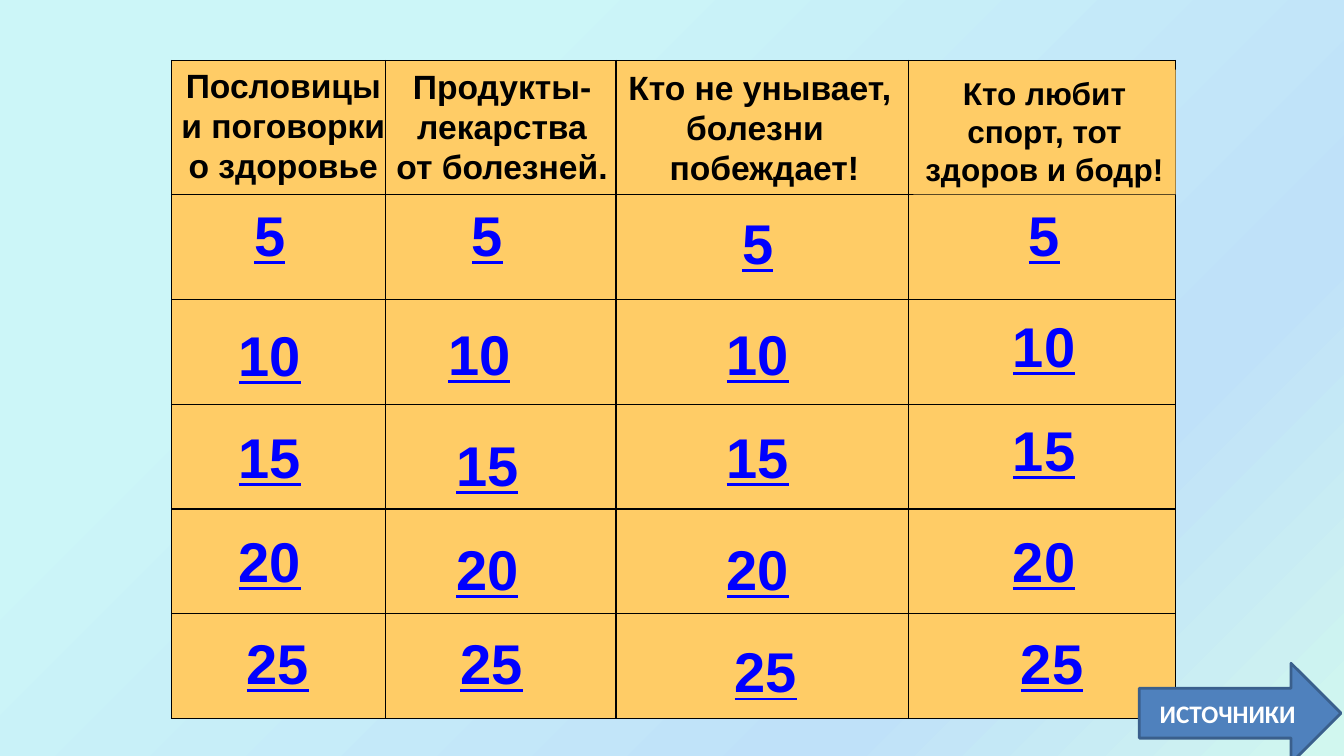
from copy import deepcopy
from dataclasses import dataclass

from lxml import etree
from pptx import Presentation
from pptx.dml.color import RGBColor
from pptx.enum.shapes import MSO_SHAPE
from pptx.enum.text import MSO_ANCHOR, MSO_AUTO_SIZE, PP_ALIGN
from pptx.oxml.ns import qn
from pptx.shapes.autoshape import Shape
from pptx.slide import Slide
from pptx.table import _Cell
from pptx.util import Emu, Pt

RECTANGLE = MSO_SHAPE.RECTANGLE
RIGHT_ARROW = MSO_SHAPE.RIGHT_ARROW
MIDDLE = MSO_ANCHOR.MIDDLE
CENTER = PP_ALIGN.CENTER
GROW = MSO_AUTO_SIZE.SHAPE_TO_FIT_TEXT

BLACK = RGBColor(0x00, 0x00, 0x00)
WHITE = RGBColor(0xFF, 0xFF, 0xFF)
GOLD = RGBColor(0xFF, 0xCC, 0x66)
SCORE_BLUE = RGBColor(0x00, 0x00, 0xFF)
ARROW_BLUE = RGBColor(0x4F, 0x81, 0xBD)
ARROW_EDGE = RGBColor(0x3A, 0x5F, 0x8C)
PALE_CYAN = RGBColor(0xCC, 0xF6, 0xF8)
PALE_BLUE = RGBColor(0xBF, 0xE1, 0xF9)
PALE_GREEN = RGBColor(0xD1, 0xF7, 0xEF)

EMU_PER_PX = 9144
SLIDE_WIDTH, SLIDE_HEIGHT = 1333, 750
COLUMN_WIDTHS = (212, 229, 290, 265)
ROW_HEIGHTS = (133, 104, 104, 104, 104, 104)
SCORES = ("5", "10", "15", "20", "25")
SCORE_HEIGHT = 77
BACKDROP_STOPS = ((0.25, PALE_CYAN), (0.75, PALE_BLUE), (1.0, PALE_GREEN))


@dataclass(frozen=True)
class Box:
    left: int
    top: int
    width: int
    height: int


@dataclass(frozen=True)
class Category:
    title: str
    box: Box
    size: float
    filled: bool
    score_centers: tuple[int, ...]
    score_tops: tuple[int, ...]


CATEGORIES = (
    Category("Пословицы и поговорки о здоровье", Box(161, 59, 240, 131), 24, False,
             (267, 267, 267, 267, 275), (194, 313, 414, 517, 619)),
    Category("Продукты-лекарства от болезней.", Box(383, 60, 230, 131), 24, False,
             (483, 475, 483, 483, 487), (194, 312, 422, 525, 619)),
    Category("Кто не унывает, болезни \n побеждает!", Box(613, 61, 281, 131), 24, True,
             (751, 751, 751, 751, 759), (202, 312, 414, 525, 627)),
    Category("Кто любит спорт, тот здоров и бодр!", Box(906, 69, 260, 124), 22.5, True,
             (1035, 1035, 1035, 1035, 1043), (194, 304, 407, 517, 619)),
)


def px(value: int) -> Emu:
    return Emu(value * EMU_PER_PX)


def place(box: Box) -> tuple[Emu, Emu, Emu, Emu]:
    return px(box.left), px(box.top), px(box.width), px(box.height)


def write(shape: Shape, text: str, font_name: str, size: float, color: RGBColor,
          wrap: bool = True, underline: bool = False) -> None:
    frame = shape.text_frame
    frame.word_wrap = wrap
    frame.text = text
    for paragraph in frame.paragraphs:
        paragraph.alignment = CENTER
        font = paragraph.font
        font.name = font_name
        font.size = Pt(size)
        font.bold = True
        font.underline = underline
        font.color.rgb = color


def add_plain_shape(slide: Slide, kind: MSO_SHAPE, box: Box) -> Shape:
    shape = slide.shapes.add_shape(kind, *place(box))
    shape.shadow.inherit = False
    shape.line.fill.background()
    return shape


def add_backdrop(slide: Slide) -> None:
    backdrop = add_plain_shape(slide, RECTANGLE, Box(0, 0, SLIDE_WIDTH, SLIDE_HEIGHT))
    backdrop.fill.gradient()
    backdrop.fill.gradient_angle = 315
    stop_list = backdrop.element.spPr.find(".//" + qn("a:gsLst"))
    stop_list.append(deepcopy(stop_list[-1]))
    for stop, (position, color) in zip(backdrop.fill.gradient_stops, BACKDROP_STOPS):
        stop.position = position
        stop.color.rgb = color


def style_cell(cell: _Cell) -> None:
    properties = cell._tc.get_or_add_tcPr()
    for side in ("a:lnL", "a:lnR", "a:lnT", "a:lnB"):
        border = etree.SubElement(properties, qn(side), w=str(Pt(1)))
        fill = etree.SubElement(border, qn("a:solidFill"))
        etree.SubElement(fill, qn("a:srgbClr"), val=str(BLACK))
    cell.fill.solid()
    cell.fill.fore_color.rgb = GOLD


def add_grid(slide: Slide) -> None:
    box = Box(170, 60, sum(COLUMN_WIDTHS), sum(ROW_HEIGHTS))
    table = slide.shapes.add_table(len(ROW_HEIGHTS), len(COLUMN_WIDTHS), *place(box)).table
    table.first_row = False
    table.horz_banding = False
    for column, width in zip(table.columns, COLUMN_WIDTHS):
        column.width = px(width)
    for row, height in zip(table.rows, ROW_HEIGHTS):
        row.height = px(height)
    for cell in table.iter_cells():
        style_cell(cell)


def add_title(slide: Slide, category: Category) -> None:
    if category.filled:
        title = add_plain_shape(slide, RECTANGLE, category.box)
        title.fill.solid()
        title.fill.fore_color.rgb = GOLD
        title.text_frame.vertical_anchor = MSO_ANCHOR.TOP
    else:
        title = slide.shapes.add_textbox(*place(category.box))
    write(title, category.title, "Arial", category.size, BLACK)
    title.text_frame.auto_size = GROW


def add_scores(slide: Slide, category: Category) -> None:
    for score, center, top in zip(SCORES, category.score_centers, category.score_tops):
        width = 51 if len(score) == 1 else 83
        box = Box(center - width // 2, top, width, SCORE_HEIGHT)
        label = slide.shapes.add_textbox(*place(box))
        write(label, score, "Arial", 40, SCORE_BLUE, wrap=False, underline=True)
        label.text_frame.auto_size = GROW


def add_sources_arrow(slide: Slide) -> None:
    arrow = add_plain_shape(slide, RIGHT_ARROW, Box(1130, 658, 200, 99))
    arrow.fill.solid()
    arrow.fill.fore_color.rgb = ARROW_BLUE
    arrow.line.color.rgb = ARROW_EDGE
    arrow.line.width = Pt(2)
    arrow.text_frame.vertical_anchor = MIDDLE
    write(arrow, "ИСТОЧНИКИ", "Calibri", 18, WHITE)


def main() -> None:
    presentation = Presentation()
    presentation.slide_width = px(SLIDE_WIDTH)
    presentation.slide_height = px(SLIDE_HEIGHT)
    slide = presentation.slides.add_slide(presentation.slide_layouts[6])
    add_backdrop(slide)
    add_grid(slide)
    for category in CATEGORIES:
        add_title(slide, category)
        add_scores(slide, category)
    add_sources_arrow(slide)
    presentation.save("out.pptx")


if __name__ == "__main__":
    main()
